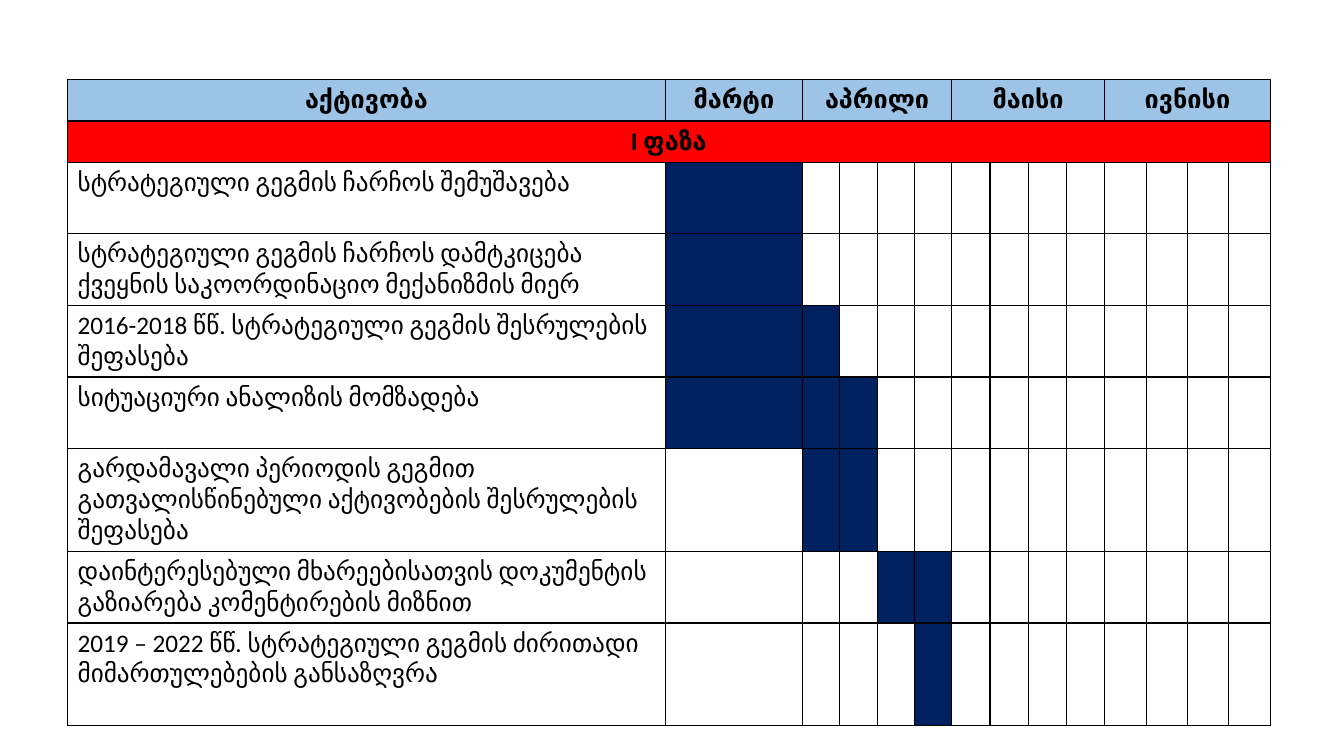
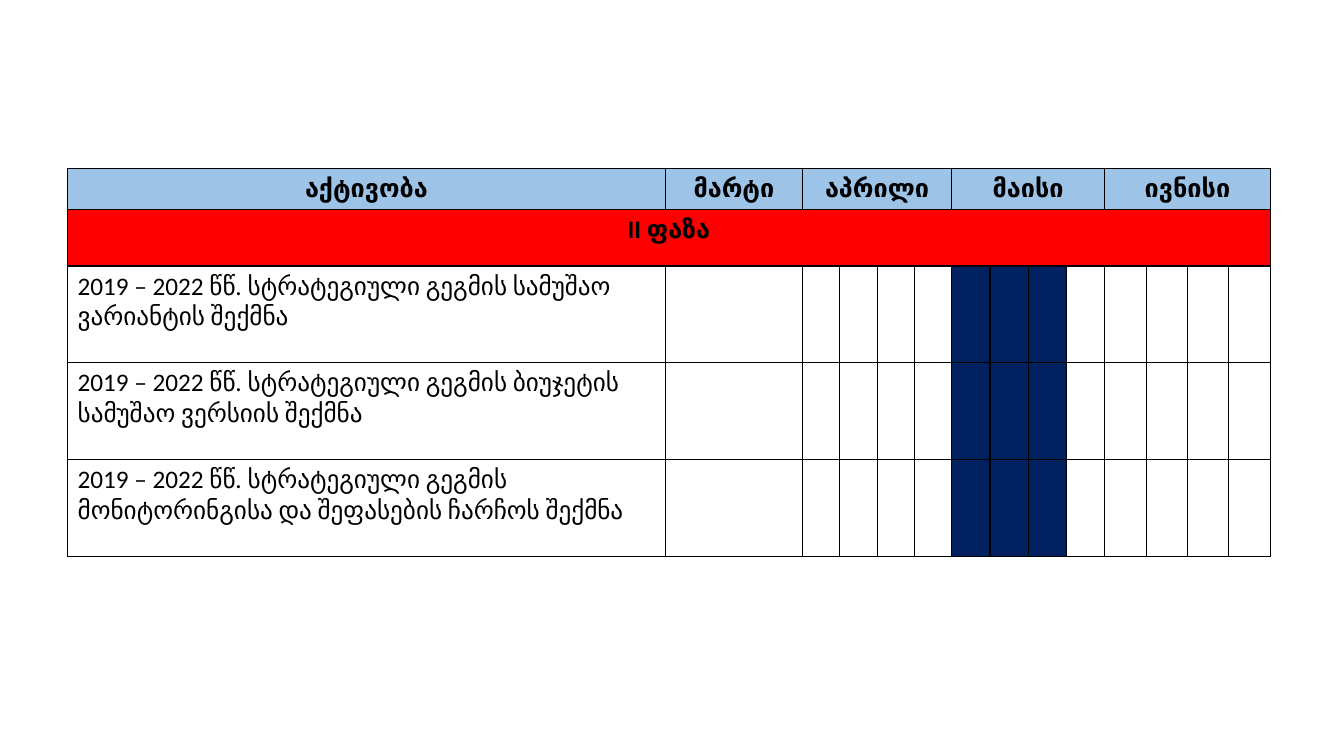
from lxml.etree import SubElement
from pptx import Presentation
from pptx.dml.color import RGBColor
from pptx.enum.text import PP_ALIGN
from pptx.oxml.ns import qn
from pptx.util import Inches, Pt

# Shared look
FONT, TEXT_SIZE = "Calibri", 18
INK, HEADER, PHASE, BAR = "000000", "9DC3E6", "FF0000", "002060"
LEFT = 0.67
ROW_HEIGHT = 0.41

# Calendar: month, number of columns, width of each column
ACTIVITY_WIDTH = 5.93
MONTHS = [("მარტი", 1, 1.36), ("აპრილი", 4, 0.37), ("მაისი", 4, 0.38), ("ივნისი", 4, 0.41)]
COLUMN_WIDTHS = [ACTIVITY_WIDTH] + [width for _, count, width in MONTHS for _ in range(count)]

# Activities: wording, row height, first and last shaded column
PHASE_1 = [
    ("სტრატეგიული გეგმის ჩარჩოს შემუშავება", 0.71, 1, 1),
    ("სტრატეგიული გეგმის ჩარჩოს დამტკიცება ქვეყნის საკოორდინაციო მექანიზმის მიერ", 0.71, 1, 1),
    ("2016-2018 წწ. სტრატეგიული გეგმის შესრულების შეფასება", 0.71, 1, 2),
    ("სიტუაციური ანალიზის მომზადება", 0.71, 1, 3),
    ("გარდამავალი პერიოდის გეგმით გათვალისწინებული აქტივობების შესრულების შეფასება", 1.02, 2, 3),
    ("დაინტერესებული მხარეებისათვის დოკუმენტის გაზიარება კომენტირების მიზნით", 0.71, 4, 5),
    ("2019 – 2022 წწ. სტრატეგიული გეგმის ძირითადი მიმართულებების განსაზღვრა", 1.02, 5, 5),
]
PHASE_2 = [
    ("2019 – 2022 წწ. სტრატეგიული გეგმის სამუშაო ვარიანტის შექმნა", 0.96, 6, 8),
    ("2019 – 2022 წწ. სტრატეგიული გეგმის ბიუჯეტის სამუშაო ვერსიის შექმნა", 0.96, 6, 8),
    ("2019 – 2022 წწ. სტრატეგიული გეგმის მონიტორინგისა და შეფასების ჩარჩოს შექმნა", 0.96, 6, 8),
]


def color(hex_value):
    return RGBColor.from_string(hex_value)


def write(cell, text, heading=False):
    paragraph = cell.text_frame.paragraphs[0]
    paragraph.text = text
    paragraph.alignment = PP_ALIGN.CENTER if heading else PP_ALIGN.LEFT
    font = paragraph.runs[0].font
    font.name, font.size, font.bold = FONT, Pt(TEXT_SIZE), heading
    font.color.rgb = color(INK)


def shade(cell, hex_value):
    cell.fill.solid()
    cell.fill.fore_color.rgb = color(hex_value)


def add_borders(cell):
    """Outline a cell; border elements must precede its fill."""
    properties = cell._tc.get_or_add_tcPr()
    for position, side in enumerate(("a:lnL", "a:lnR", "a:lnT", "a:lnB")):
        line = SubElement(properties, qn(side), w=str(Pt(1)))
        fill = SubElement(line, qn("a:solidFill"))
        SubElement(fill, qn("a:srgbClr"), val=INK)
        properties.insert(position, line)


def write_band(chart, row, column, span, text, fill):
    """Merge a run of cells into one centred, coloured heading."""
    cell = chart.cell(row, column)
    if span > 1:
        cell.merge(chart.cell(row, column + span - 1))
    write(cell, text, heading=True)
    shade(cell, fill)


def add_schedule(prs, top, phase, phase_height, activities):
    slide = prs.slides.add_slide(prs.slide_layouts[6])
    heights = [ROW_HEIGHT, phase_height] + [activity[1] for activity in activities]
    chart = slide.shapes.add_table(
        len(heights), len(COLUMN_WIDTHS), Inches(LEFT), Inches(top),
        Inches(sum(COLUMN_WIDTHS)), Inches(sum(heights))).table
    chart.first_row = chart.horz_banding = False
    for column, width in zip(chart.columns, COLUMN_WIDTHS):
        column.width = Inches(width)
    for row, height in zip(chart.rows, heights):
        row.height = Inches(height)
    for cell in chart.iter_cells():
        cell.fill.background()

    # Month headings and phase band
    write_band(chart, 0, 0, 1, "აქტივობა", HEADER)
    start = 1
    for month, count, _ in MONTHS:
        write_band(chart, 0, start, count, month, HEADER)
        start += count
    write_band(chart, 1, 0, len(COLUMN_WIDTHS), phase, PHASE)

    # Activities and their time bars
    for row, (activity, _, first, last) in enumerate(activities, start=2):
        write(chart.cell(row, 0), activity)
        for column in range(first, last + 1):
            shade(chart.cell(row, column), BAR)

    for cell in chart.iter_cells():
        add_borders(cell)


def main():
    prs = Presentation()
    prs.slide_width, prs.slide_height = Inches(13.33), Inches(7.5)
    add_schedule(prs, 0.79, "I ფაზა", ROW_HEIGHT, PHASE_1)
    add_schedule(prs, 1.67, "II ფაზა", 0.56, PHASE_2)
    prs.save("out.pptx")


if __name__ == "__main__":
    main()
